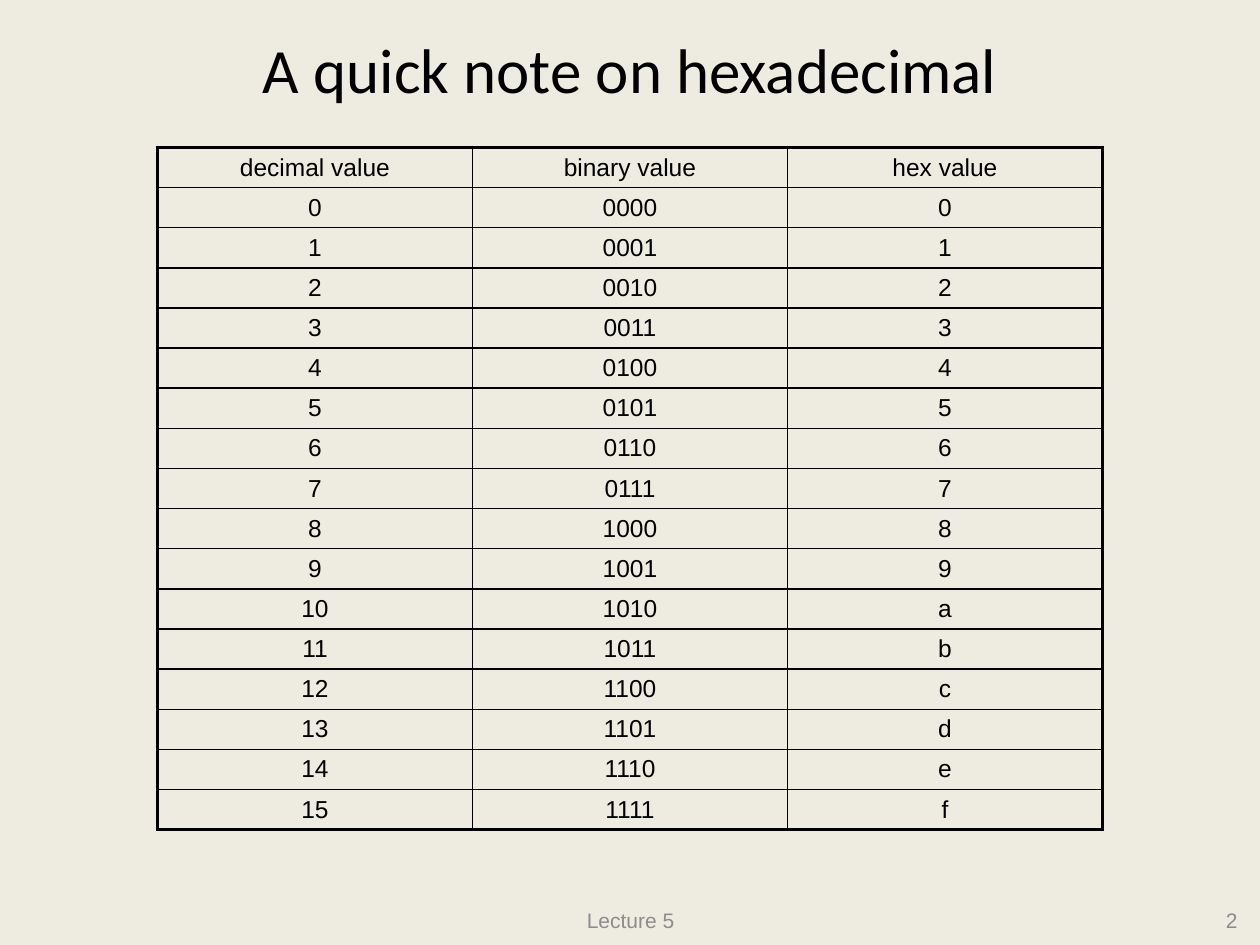
import dataclasses

import pptx
import pptx.dml.color
import pptx.enum.text
import pptx.oxml
import pptx.oxml.ns
import pptx.presentation
import pptx.slide
import pptx.table
import pptx.text.text
import pptx.util
from pptx.util import Inches

COLORS = {"background": "EEECE1", "text": "000000", "footer": "8C8C8C"}
ALIGN = pptx.enum.text.PP_ALIGN
MIDDLE = pptx.enum.text.MSO_ANCHOR.MIDDLE
HEADERS = ("decimal value", "binary value", "hex value")
THIN, THICK = 1, 2.25


@dataclasses.dataclass(frozen=True)
class Label:
    text: str
    left: float
    top: float
    width: float
    height: float
    size: float
    font: str
    color: str
    align: ALIGN = ALIGN.CENTER


LABELS = (
    Label("A quick note on hexadecimal", 0.75, -0.08, 8.5, 1.25, 36, "Calibri", "text"),
    Label("Lecture 5", 3.42, 7.1, 3.17, 0.4, 12, "Arial", "footer"),
    Label("2", 7.59, 7.1, 2.33, 0.4, 12, "Arial", "footer", ALIGN.RIGHT),
)


def rgb(name: str) -> pptx.dml.color.RGBColor:
    return pptx.dml.color.RGBColor.from_string(COLORS[name])


def format_text(
    text_frame: pptx.text.text.TextFrame, size: float, font: str, color: str, align: ALIGN
) -> None:
    for paragraph in text_frame.paragraphs:
        paragraph.alignment = align
        for run in paragraph.runs:
            run.font.size = pptx.util.Pt(size)
            run.font.name = font
            run.font.color.rgb = rgb(color)


def add_label(slide: pptx.slide.Slide, label: Label) -> None:
    shape = slide.shapes.add_textbox(
        Inches(label.left), Inches(label.top), Inches(label.width), Inches(label.height)
    )
    text_frame = shape.text_frame
    text_frame.word_wrap = True
    text_frame.vertical_anchor = MIDDLE
    text_frame.text = label.text
    format_text(text_frame, label.size, label.font, label.color, label.align)


def set_borders(cell: pptx.table._Cell, widths: dict[str, float]) -> None:
    properties = cell._tc.get_or_add_tcPr()
    for position, (side, width) in enumerate(widths.items()):
        border = pptx.oxml.parse_xml(
            f'<a:ln{side} {pptx.oxml.ns.nsdecls("a")} w="{pptx.util.Pt(width)}">'
            f'<a:solidFill><a:srgbClr val="{COLORS["text"]}"/></a:solidFill>'
            f"</a:ln{side}>"
        )
        properties.insert(position, border)


def add_number_table(slide: pptx.slide.Slide) -> None:
    rows = [HEADERS] + [(str(n), f"{n:04b}", f"{n:x}") for n in range(16)]
    last_row, last_column = len(rows) - 1, len(HEADERS) - 1
    table = slide.shapes.add_table(
        len(rows), len(HEADERS), Inches(1.25), Inches(1.17), Inches(7.5), Inches(5.42)
    ).table
    table.first_row = False
    table.horz_banding = False
    for row_index, values in enumerate(rows):
        for column_index, value in enumerate(values):
            cell = table.cell(row_index, column_index)
            cell.fill.background()
            cell.margin_top = cell.margin_bottom = Inches(0.04)
            cell.vertical_anchor = MIDDLE
            cell.text_frame.text = value
            format_text(cell.text_frame, 14, "Arial", "text", ALIGN.CENTER)
            set_borders(
                cell,
                {
                    "L": THICK if column_index == 0 else THIN,
                    "R": THICK if column_index == last_column else THIN,
                    "T": THICK if row_index == 0 else THIN,
                    "B": THICK if row_index == last_row else THIN,
                },
            )


def main() -> None:
    presentation = pptx.Presentation()
    presentation.slide_width = Inches(10)
    presentation.slide_height = Inches(7.5)
    slide = presentation.slides.add_slide(presentation.slide_layouts[6])
    slide.background.fill.solid()
    slide.background.fill.fore_color.rgb = rgb("background")
    for label in LABELS:
        add_label(slide, label)
    add_number_table(slide)
    presentation.save("out.pptx")


if __name__ == "__main__":
    main()
